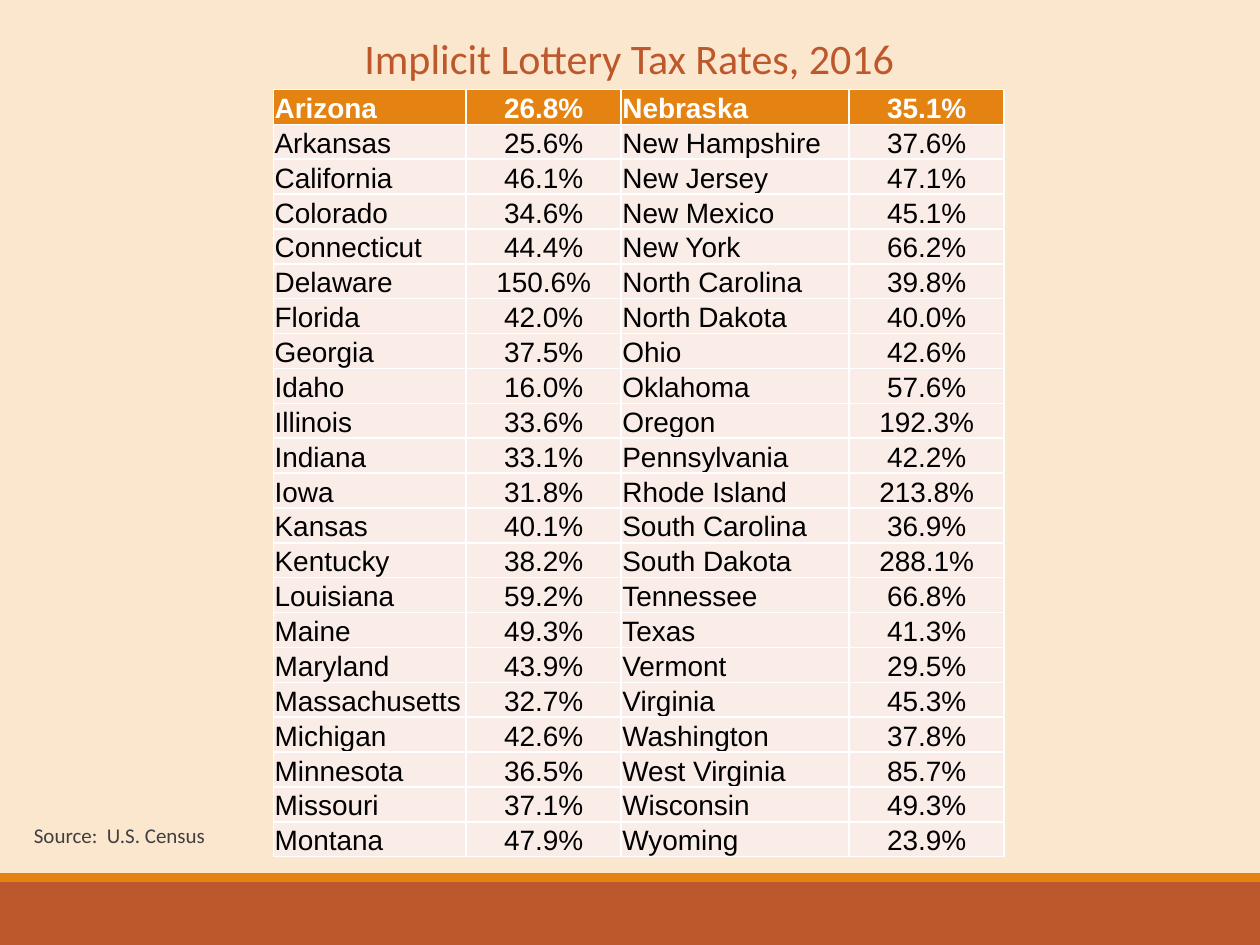
from pptx import Presentation
from pptx.dml.color import RGBColor
from pptx.enum.shapes import MSO_SHAPE
from pptx.enum.text import MSO_ANCHOR, MSO_AUTO_SIZE, PP_ALIGN
from pptx.util import Inches, Pt

C = {"bg": "FBE6CE", "rust": "BD582C", "orange": "E48312", "row": "FAEDE7",
     "gray": "404040", "white": "FFFFFF", "black": "000000"}

RATES = [
    ("Arizona", "26.8%", "Nebraska", "35.1%"),
    ("Arkansas", "25.6%", "New Hampshire", "37.6%"),
    ("California", "46.1%", "New Jersey", "47.1%"),
    ("Colorado", "34.6%", "New Mexico", "45.1%"),
    ("Connecticut", "44.4%", "New York", "66.2%"),
    ("Delaware", "150.6%", "North Carolina", "39.8%"),
    ("Florida", "42.0%", "North Dakota", "40.0%"),
    ("Georgia", "37.5%", "Ohio", "42.6%"),
    ("Idaho", "16.0%", "Oklahoma", "57.6%"),
    ("Illinois", "33.6%", "Oregon", "192.3%"),
    ("Indiana", "33.1%", "Pennsylvania", "42.2%"),
    ("Iowa", "31.8%", "Rhode Island", "213.8%"),
    ("Kansas", "40.1%", "South Carolina", "36.9%"),
    ("Kentucky", "38.2%", "South Dakota", "288.1%"),
    ("Louisiana", "59.2%", "Tennessee", "66.8%"),
    ("Maine", "49.3%", "Texas", "41.3%"),
    ("Maryland", "43.9%", "Vermont", "29.5%"),
    ("Massachusetts", "32.7%", "Virginia", "45.3%"),
    ("Michigan", "42.6%", "Washington", "37.8%"),
    ("Minnesota", "36.5%", "West Virginia", "85.7%"),
    ("Missouri", "37.1%", "Wisconsin", "49.3%"),
    ("Montana", "47.9%", "Wyoming", "23.9%"),
]


def write(tf, text, size, color, font="Calibri", bold=False,
          align=PP_ALIGN.LEFT, spaced=False):
    p = tf.paragraphs[0]
    p.alignment = align
    if spaced:
        tf.word_wrap = False
        tf.auto_size = MSO_AUTO_SIZE.SHAPE_TO_FIT_TEXT
        tf.vertical_anchor = MSO_ANCHOR.TOP
        p.line_spacing = 0.9
        p.space_before, p.space_after = Pt(6.8), Pt(1.1)
        pPr = p._p.get_or_add_pPr()
        pPr.set("marL", str(Inches(0.06)))
        pPr.set("indent", str(-Inches(0.06)))
    r = p.add_run()
    r.text = text
    r.font.name, r.font.size, r.font.bold = font, Pt(size), bold
    r.font.color.rgb = RGBColor.from_string(C[color])


prs = Presentation()
prs.slide_width, prs.slide_height = Inches(10), Inches(7.5)
W = prs.slide_width
s = prs.slides.add_slide(prs.slide_layouts[5])
s.background.fill.solid()
s.background.fill.fore_color.rgb = RGBColor.from_string(C["bg"])

for top, height, color in [(0.7, 0.05, "rust"), (0.693, 0.007, "orange")]:
    sp = s.shapes.add_shape(MSO_SHAPE.RECTANGLE, 0, int(W * top), W, int(W * height))
    sp.shadow.inherit = False
    sp.fill.solid()
    sp.fill.fore_color.rgb = RGBColor.from_string(C[color])
    sp.line.fill.background()

title = s.shapes.title
title.left, title.top = Inches(2.77), Inches(0.25)
title.width, title.height = Inches(4.45), Inches(0.46)
write(title.text_frame, "Implicit Lottery Tax Rates, 2016", 24, "rust",
      align=PP_ALIGN.CENTER, spaced=True)

source = s.shapes.add_textbox(Inches(0.17), Inches(6.5), Inches(1.58), Inches(0.28))
write(source.text_frame, "Source:  U.S. Census", 12, "gray", spaced=True)

col_widths = [1.53, 1.23, 1.81, 1.23]
table = s.shapes.add_table(len(RATES), len(col_widths), Inches(2.17), Inches(0.71),
                           Inches(sum(col_widths)), Inches(6.08)).table
table.horz_banding = False
for col, width in zip(table.columns, col_widths):
    col.width = Inches(width)

for i, rates in enumerate(RATES):
    header = i == 0
    for j, text in enumerate(rates):
        cell = table.cell(i, j)
        cell.fill.solid()
        cell.fill.fore_color.rgb = RGBColor.from_string(C["orange" if header else "row"])
        cell.vertical_anchor = MSO_ANCHOR.BOTTOM
        cell.margin_left = cell.margin_right = cell.margin_top = Inches(0.01)
        cell.margin_bottom = 0
        write(cell.text_frame, text, 16, "white" if header else "black", font="Arial",
              bold=header, align=PP_ALIGN.CENTER if j % 2 else PP_ALIGN.LEFT)

prs.save("out.pptx")
